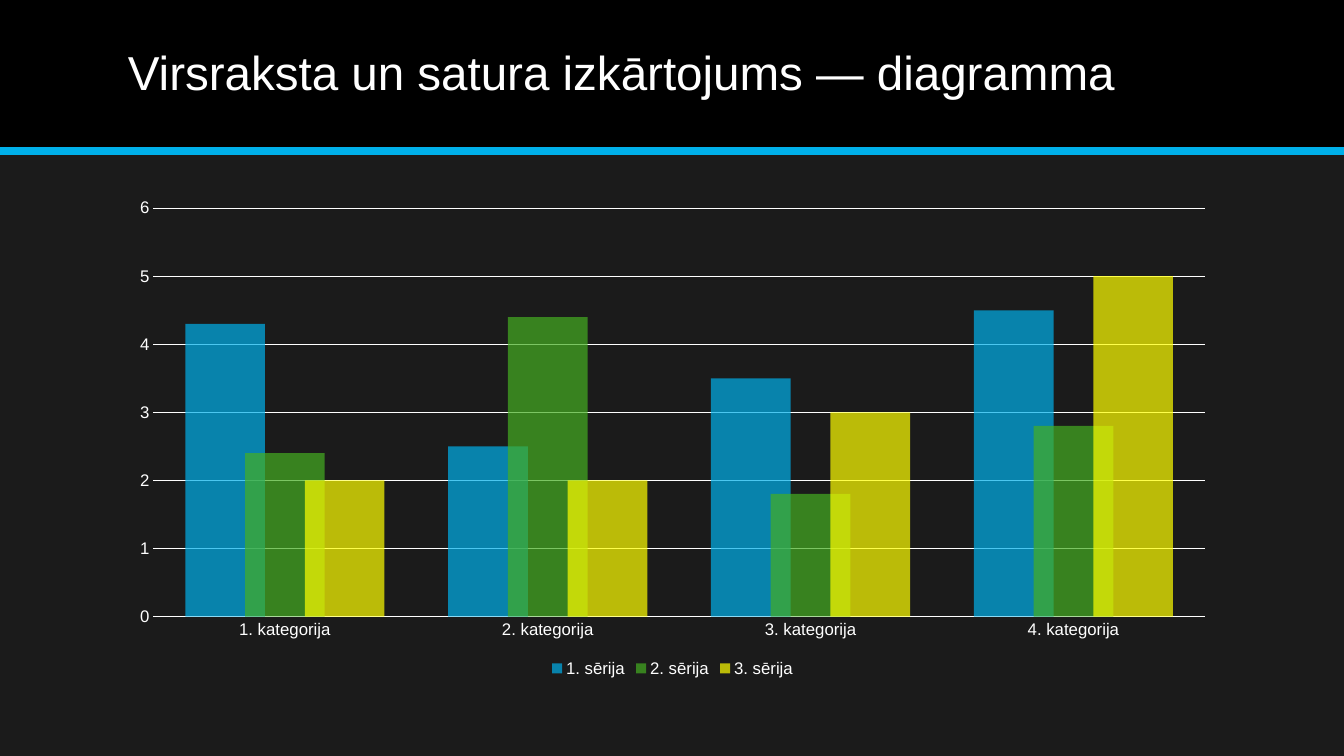
from lxml.etree import SubElement
from pptx import Presentation
from pptx.chart.data import CategoryChartData
from pptx.dml.color import RGBColor
from pptx.enum.chart import XL_CHART_TYPE, XL_LEGEND_POSITION, XL_TICK_MARK
from pptx.enum.shapes import MSO_CONNECTOR, MSO_SHAPE
from pptx.enum.text import MSO_ANCHOR
from pptx.oxml.ns import qn
from pptx.util import Inches, Pt

FONT = "Arial"
WHITE = "FFFFFF"
ACCENT = "00B0EA"
WIDTH, HEIGHT = 13.33, 7.5
MARGIN, CONTENT_WIDTH = 1.17, 11
BAND_HEIGHT = 1.5

CATEGORIES = [f"{number}. kategorija" for number in range(1, 5)]
SERIES = [
    ("1. sērija", (4.3, 2.5, 3.5, 4.5), ACCENT),
    ("2. sērija", (2.4, 4.4, 1.8, 2.8), "45AE22"),
    ("3. sērija", (2, 2, 3, 5), "FFFF00"),
]


def color(value):
    return RGBColor.from_string(value)


def paint(fill, value, opacity=100):
    """Fill with a solid colour; opacity is in percent."""
    fill.solid()
    fill.fore_color.rgb = color(value)
    if opacity < 100:
        for tone in fill._xPr.iter(qn("a:srgbClr")):
            SubElement(tone, qn("a:alpha"), val=str(opacity * 1000))


def style_font(font, size):
    font.name = FONT
    font.size = Pt(size)
    font.color.rgb = color(WHITE)


def style_line(line, value, width):
    line.color.rgb = color(value)
    line.width = Pt(width)


def add_header_band(page, left, top, width, height):
    """Black band with an accent rule along its lower edge."""
    band = page.shapes.add_shape(
        MSO_SHAPE.RECTANGLE, Inches(left), Inches(top), Inches(width), Inches(height))
    band.shadow.inherit = False
    paint(band.fill, "000000")
    band.line.fill.background()

    bottom = Inches(top + height)
    rule = page.shapes.add_connector(
        MSO_CONNECTOR.STRAIGHT, Inches(left), bottom, Inches(left + width), bottom)
    style_line(rule.line, ACCENT, 6)
    SubElement(rule._element.spPr, qn("a:effectLst"))


def add_title(page, left, top, width, height):
    box = page.shapes.add_textbox(Inches(left), Inches(top), Inches(width), Inches(height))
    frame = box.text_frame
    frame.word_wrap = True
    frame.vertical_anchor = MSO_ANCHOR.MIDDLE
    para = frame.paragraphs[0]
    para.line_spacing = 0.9
    span = para.add_run()
    span.text = "Virsraksta un satura izkārtojums — diagramma"
    style_font(span.font, 34)


def add_column_chart(page, left, top, width, height):
    data = CategoryChartData()
    data.categories = CATEGORIES
    for name, values, _ in SERIES:
        data.add_series(name, values)
    chart = page.shapes.add_chart(
        XL_CHART_TYPE.COLUMN_CLUSTERED,
        Inches(left), Inches(top), Inches(width), Inches(height), data).chart
    chart.has_title = False
    style_font(chart.font, 10)

    plot = chart.plots[0]
    plot.vary_by_categories = False
    plot.gap_width = 80
    plot.overlap = 25
    for series, (_, _, tone) in zip(plot.series, SERIES):
        paint(series.format.fill, tone, opacity=70)
        series.invert_if_negative = False

    for axis in (chart.category_axis, chart.value_axis):
        axis.major_tick_mark = axis.minor_tick_mark = XL_TICK_MARK.NONE
        style_font(axis.tick_labels.font, 12)
    style_line(chart.category_axis.format.line, WHITE, 1.25)

    scale = chart.value_axis
    scale.minimum_scale, scale.maximum_scale, scale.major_unit = 0, 6, 1
    scale.format.line.fill.background()
    scale.has_major_gridlines = True
    style_line(scale.major_gridlines.format.line, WHITE, 0.75)

    chart.has_legend = True
    chart.legend.position = XL_LEGEND_POSITION.BOTTOM
    chart.legend.include_in_layout = False
    style_font(chart.legend.font, 12)


def main():
    deck = Presentation()
    deck.slide_width, deck.slide_height = Inches(WIDTH), Inches(HEIGHT)
    page = deck.slides.add_slide(deck.slide_layouts[6])
    paint(page.background.fill, "1B1B1B")
    add_header_band(page, 0, 0, WIDTH, BAND_HEIGHT)
    add_title(page, MARGIN, 0.14, CONTENT_WIDTH, 1.2)
    add_column_chart(page, MARGIN, 1.88, CONTENT_WIDTH, 4.88)
    deck.save("out.pptx")


if __name__ == "__main__":
    main()
